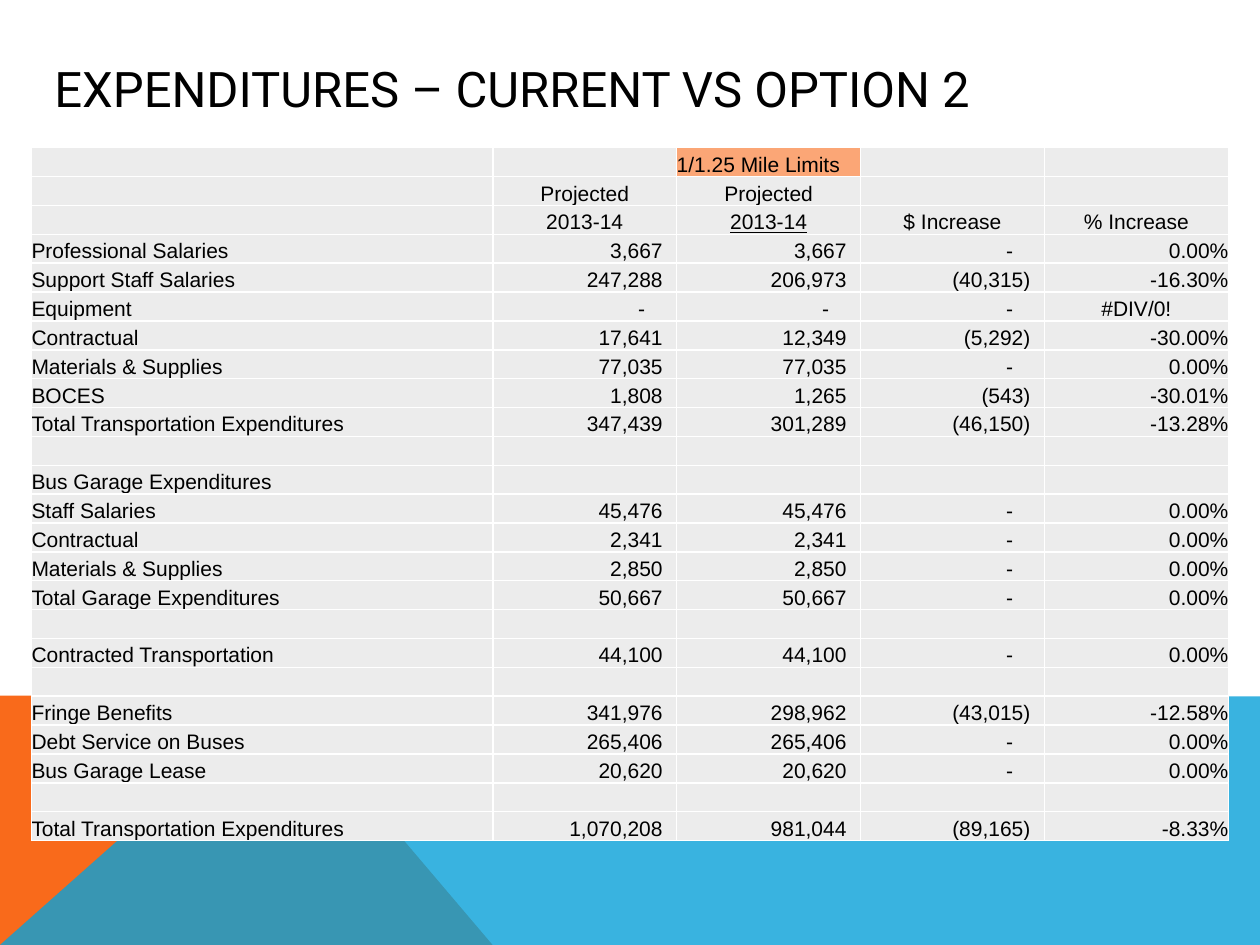
import pptx
import pptx.util
import pptx.dml.color
import pptx.enum.text
import lxml.etree

Pt = pptx.util.Pt
RGB = pptx.dml.color.RGBColor.from_string
ALIGN = pptx.enum.text.PP_ALIGN
ANCHOR = pptx.enum.text.MSO_ANCHOR
NS = "http://schemas.openxmlformats.org/drawingml/2006/main"
COLORS = {"text": "000000", "orange": "F96A1B", "blue": "08A1D9",
          "cell": "ECECEC", "highlight": "FBA676", "border": "FFFFFF"}

prs = pptx.Presentation()
prs.slide_width, prs.slide_height = Pt(720), Pt(540)
s = prs.slides.add_slide(prs.slide_layouts[6])


def add_sub(parent, tag, **attrs):
    return lxml.etree.SubElement(parent, f"{{{NS}}}{tag}", attrs)


# Background bands: opaque orange below translucent blue
bands = [("orange", [(0, 540), (0, 397.5), (160.5, 397.5), (281.5, 540)]),
         ("blue", [(0, 540), (160.5, 397.5), (720, 398), (720, 540)])]
for color, corners in bands:
    points = [(Pt(x), Pt(y)) for x, y in corners]
    fb = s.shapes.build_freeform(*points[0])
    fb.add_line_segments(points[1:], close=True)
    sp = fb.convert_to_shape()
    sp.shadow.inherit = False
    sp.fill.solid()
    sp.fill.fore_color.rgb = RGB(COLORS[color])
    sp.line.fill.background()
    if color == "blue":
        add_sub(sp.fill._xPr.find(f".//{{{NS}}}srgbClr"), "alpha", val="80000")

# Title
sp = s.shapes.add_textbox(Pt(24), Pt(29), Pt(666), Pt(43))
tf = sp.text_frame
tf.word_wrap = True
tf.vertical_anchor = ANCHOR.MIDDLE
tf.text = "EXPENDITURES – CURRENT VS OPTION 2"
r = tf.paragraphs[0].runs[0]
r.font.name, r.font.size = "Roboto", Pt(28)
r.font.color.rgb = RGB(COLORS["text"])

# Table content
HEADER_ROWS = 3
rows = [
    ["", "", "1/1.25 Mile Limits", "", ""],
    ["", "Projected", "Projected", "", ""],
    ["", "2013-14", "2013-14", "$ Increase", "% Increase"],
    ["Professional Salaries", "3,667", "3,667", "-", "0.00%"],
    ["Support Staff Salaries", "247,288", "206,973", "(40,315)", "-16.30%"],
    ["Equipment", "-", "-", "-", "#DIV/0!"],
    ["Contractual", "17,641", "12,349", "(5,292)", "-30.00%"],
    ["Materials & Supplies", "77,035", "77,035", "-", "0.00%"],
    ["BOCES", "1,808", "1,265", "(543)", "-30.01%"],
    ["Total Transportation Expenditures", "347,439", "301,289", "(46,150)", "-13.28%"],
    [""] * 5,
    ["Bus Garage Expenditures", "", "", "", ""],
    ["Staff Salaries", "45,476", "45,476", "-", "0.00%"],
    ["Contractual", "2,341", "2,341", "-", "0.00%"],
    ["Materials & Supplies", "2,850", "2,850", "-", "0.00%"],
    ["Total Garage Expenditures", "50,667", "50,667", "-", "0.00%"],
    [""] * 5,
    ["Contracted Transportation", "44,100", "44,100", "-", "0.00%"],
    [""] * 5,
    ["Fringe Benefits", "341,976", "298,962", "(43,015)", "-12.58%"],
    ["Debt Service on Buses", "265,406", "265,406", "-", "0.00%"],
    ["Bus Garage Lease", "20,620", "20,620", "-", "0.00%"],
    [""] * 5,
    ["Total Transportation Expenditures", "1,070,208", "981,044", "(89,165)", "-8.33%"],
]
widths = [263.6] + [105.1] * 4
row_height = 16.5

tbl = s.shapes.add_table(len(rows), len(widths), Pt(18), Pt(84.4),
                         Pt(sum(widths)), Pt(row_height * len(rows))).table
tbl.first_row = tbl.horz_banding = False
for col, width in zip(tbl.columns, widths):
    col.width = Pt(width)

for i, row in enumerate(rows):
    tbl.rows[i].height = Pt(row_height)
    for j, value in enumerate(row):
        cell = tbl.cell(i, j)
        highlighted = (i, j) == (0, 2)
        cell.margin_left = cell.margin_right = 0
        cell.margin_top = cell.margin_bottom = 0
        cell.vertical_anchor = ANCHOR.BOTTOM

        # Borders come before the fill in the cell properties
        for side in ("lnL", "lnR", "lnT", "lnB"):
            ln = add_sub(cell._tc.get_or_add_tcPr(), side, w=str(Pt(1)))
            add_sub(add_sub(ln, "solidFill"), "srgbClr", val=COLORS["border"])
        cell.fill.solid()
        cell.fill.fore_color.rgb = RGB(COLORS["highlight" if highlighted else "cell"])

        p = cell.text_frame.paragraphs[0]
        if not value:
            add_sub(p._p, "endParaRPr", sz="1200")
            continue
        p.text = value
        r = p.runs[0]
        r.font.name, r.font.size = "Arial", Pt(12)
        r.font.color.rgb = RGB(COLORS["text"])
        r.font.underline = True if (i, j) == (2, 2) else None

        # Labels left, headings and errors centred, figures right
        if j == 0 or highlighted:
            p.alignment = ALIGN.LEFT
        elif i < HEADER_ROWS or value.startswith("#"):
            p.alignment = ALIGN.CENTER
        else:
            p.alignment = ALIGN.RIGHT
            if j < 4:
                cell.margin_right = Pt(18 if value == "-" else 8)

prs.save("out.pptx")
